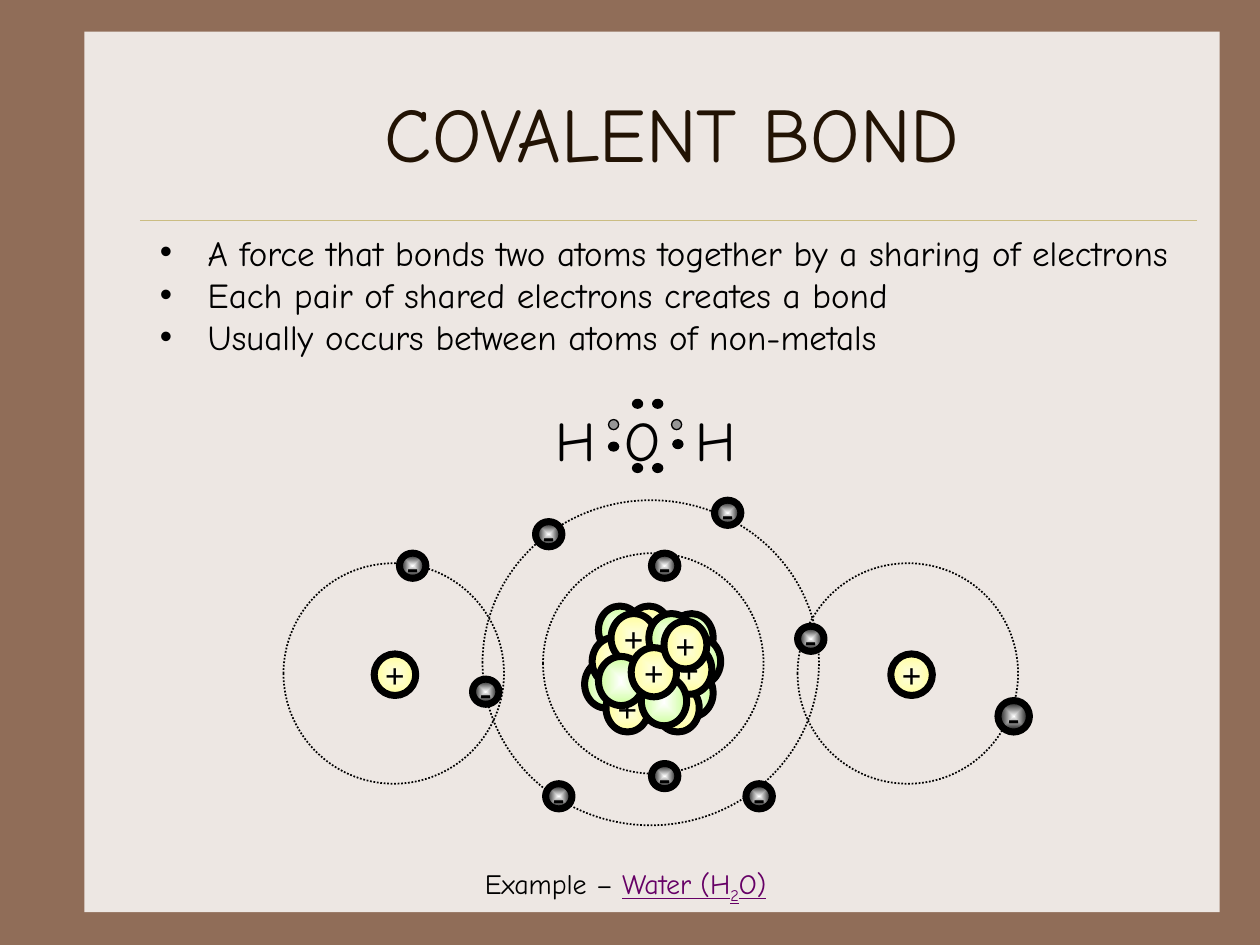
from lxml.etree import SubElement
from pptx import Presentation
from pptx.dml.color import RGBColor
from pptx.enum.dml import MSO_LINE
from pptx.enum.shapes import MSO_CONNECTOR, MSO_SHAPE
from pptx.enum.text import MSO_ANCHOR, PP_ALIGN
from pptx.oxml.ns import qn
from pptx.util import Inches, Pt

OVAL, RECTANGLE = MSO_SHAPE.OVAL, MSO_SHAPE.RECTANGLE
STRAIGHT = MSO_CONNECTOR.STRAIGHT
DOTTED = MSO_LINE.ROUND_DOT
MIDDLE, CENTER = MSO_ANCHOR.MIDDLE, PP_ALIGN.CENTER
color = RGBColor.from_string

# Particle kinds: centre colour, edge colour, sign
PROTON = ("FEFDE3", "FFFF99", "+")
NEUTRON = ("FFFFFF", "CCFF99", "")
ELECTRON = ("FFFFFF", "000000", "-")

presentation = Presentation()
presentation.slide_width, presentation.slide_height = Inches(10), Inches(7.5)
slide = presentation.slides.add_slide(presentation.slide_layouts[6])
shapes = slide.shapes
cell = presentation.slide_width / 10  # grid of 10 columns by 7.5 rows


def add_run(paragraph, text, size, hex_color="000000", **formats):
    run = paragraph.add_run()
    run.text = text
    for name, value in ({"name": "Comic Neue", "size": Pt(size)} | formats).items():
        setattr(run.font, name, value)
    run.font.color.rgb = color(hex_color)
    return run


def add_circle(parent, box, line_width, fill=None, particle=None):
    """Draw a dotted orbit, a plain dot (fill) or a shaded particle."""
    circle = parent.add_shape(OVAL, *(int(value * cell) for value in box))
    circle.shadow.inherit = False
    circle.line.color.rgb = color("000000")
    circle.line.width = Pt(line_width)
    if fill:
        circle.fill.solid()
        circle.fill.fore_color.rgb = color(fill)
    elif particle:
        inner, outer, sign = particle
        circle.fill.gradient()
        for stop, shade in zip(circle.fill.gradient_stops, (inner, outer)):
            stop.color.rgb = color(shade)
        gradient = circle._element.spPr.find(qn("a:gradFill"))
        gradient.remove(gradient.find(qn("a:lin")))
        radial = SubElement(gradient, qn("a:path"), {"path": "shape"})
        SubElement(radial, qn("a:fillToRect"), dict.fromkeys("ltrb", "50000"))
        if sign:
            frame = circle.text_frame
            frame.word_wrap, frame.vertical_anchor = False, MIDDLE
            frame.paragraphs[0].alignment = CENTER
            add_run(frame.paragraphs[0], sign, 20, name="Times New Roman", bold=True)
    else:
        circle.fill.background()
        circle.line.dash_style = DOTTED


# Background, panel and rule
slide.background.fill.solid()
slide.background.fill.fore_color.rgb = color("906D58")
panel = shapes.add_shape(RECTANGLE, *(int(v * cell) for v in (0.67, 0.25, 9.01, 6.99)))
panel.shadow.inherit = False
panel.fill.solid()
panel.fill.fore_color.rgb = color("EDE7E3")
panel.line.fill.background()
rule = shapes.add_connector(STRAIGHT, *(int(v * cell) for v in (1.11, 1.75, 9.5, 1.75)))
rule.line.color.rgb = color("CBBD83")
rule.line.width = Pt(0.25)
SubElement(rule._element.spPr, qn("a:effectLst"))

# Text boxes
frames = {}
for name, box in {
    "title": (1.17, 0.42, 8.33, 1.25),
    "bullets": (1.17, 1.85, 8.33, 1.42),
    "example": (3.75, 6.83, 2.64, 0.37),
}.items():
    frames[name] = shapes.add_textbox(*(int(v * cell) for v in box)).text_frame
    frames[name].word_wrap = True

frames["title"].vertical_anchor = MIDDLE
title = frames["title"].paragraphs[0]
title.alignment = CENTER
add_run(title, "COVALENT BOND", 44, "221304")

for index, text in enumerate((
    "A force that bonds two atoms together by a sharing of electrons",
    "Each pair of shared electrons creates a bond",
    "Usually occurs between atoms of non-metals",
)):
    frame = frames["bullets"]
    paragraph = frame.add_paragraph() if index else frame.paragraphs[0]
    paragraph.line_spacing = 0.8
    paragraph.space_before = Pt(5 if index else 0)
    properties = paragraph._p.get_or_add_pPr()
    properties.set("marL", str(Inches(0.38)))
    properties.set("indent", str(-Inches(0.38)))
    SubElement(properties, qn("a:buFont"), {"typeface": "Arial"})
    SubElement(properties, qn("a:buChar"), {"char": "•"})
    add_run(paragraph, text, 20)

example = frames["example"].paragraphs[0]
add_run(example, "Example – ", 16)
for text, baseline in (("Water (H", 0), ("2", -25000), ("O)", 0)):
    run = add_run(example, text, 16, "660066", underline=True)
    run.font._element.set("baseline", str(baseline))

# Hydrogen nuclei
for left in (2.97, 7.07):
    add_circle(shapes, (left, 5.19, 0.33, 0.33), 4, particle=PROTON)

# Oxygen nucleus, back to front
SMALL, LARGE = (0.34, 0.38), (0.36, 0.39)
nucleus = shapes.add_group_shape().shapes
for particle, size, places in (
    (NEUTRON, SMALL, ((5.32, 4.87), (4.64, 5.24), (5.38, 5.06), (5.32, 5.31), (4.75, 4.81))),
    (PROTON, SMALL, ((5.21, 5.43), (4.98, 4.81), (4.7, 5.06), (4.81, 5.43))),
    (PROTON, LARGE, ((4.85, 4.87),)),
    (NEUTRON, LARGE, ((5.15, 4.87),)),
    (PROTON, LARGE, ((5.29, 5.12),)),
    (NEUTRON, LARGE, ((4.75, 5.21), (5.09, 5.37))),
    (PROTON, LARGE, ((5.01, 5.14),)),
    (PROTON, SMALL, ((5.27, 4.93),)),
):
    for place in places:
        add_circle(nucleus, place + size, 4, particle=particle)

# Orbits: inner and outer oxygen, left and right hydrogen
for orbit in (
    (4.31, 4.39, 1.75, 1.75),
    (3.83, 3.97, 2.67, 2.58),
    (2.25, 4.47, 1.75, 1.75),
    (6.33, 4.47, 1.75, 1.75),
):
    add_circle(shapes, orbit, 1)

# Electrons
add_circle(shapes, (7.92, 5.56, 0.25, 0.25), 4, particle=ELECTRON)
for place in (
    (3.17, 4.39), (5.17, 6.06), (5.17, 4.39), (5.67, 3.97), (4.25, 4.14),
    (6.33, 4.97), (5.92, 6.22), (4.33, 6.22), (3.75, 5.39),
):
    add_circle(shapes, place + (0.21, 0.2), 4, particle=ELECTRON)

# Electron dot formula: oxygen dots are black, hydrogen dots are grey
for symbol, left, width, fill, height, dots in (
    ("O", 4.86, 0.56, "000000", 0.07,
     ((5.18, 3.68), (5.02, 3.17), (5.18, 3.17), (4.83, 3.51), (5.34, 3.49), (5.02, 3.68))),
    ("H", 4.31, 0.58, "969696", 0.08, ((4.83, 3.33),)),
    ("H", 5.42, 0.58, "969696", 0.08, ((5.33, 3.33),)),
):
    atom = shapes.add_group_shape().shapes
    letter = atom.add_textbox(*(int(v * cell) for v in (left, 3.17, width, 0.63)))
    letter.text_frame.word_wrap = True
    add_run(letter.text_frame.paragraphs[0], symbol, 32)
    for dot in dots:
        add_circle(atom, dot + (0.08, height), 0.75, fill=fill)

presentation.save("out.pptx")
